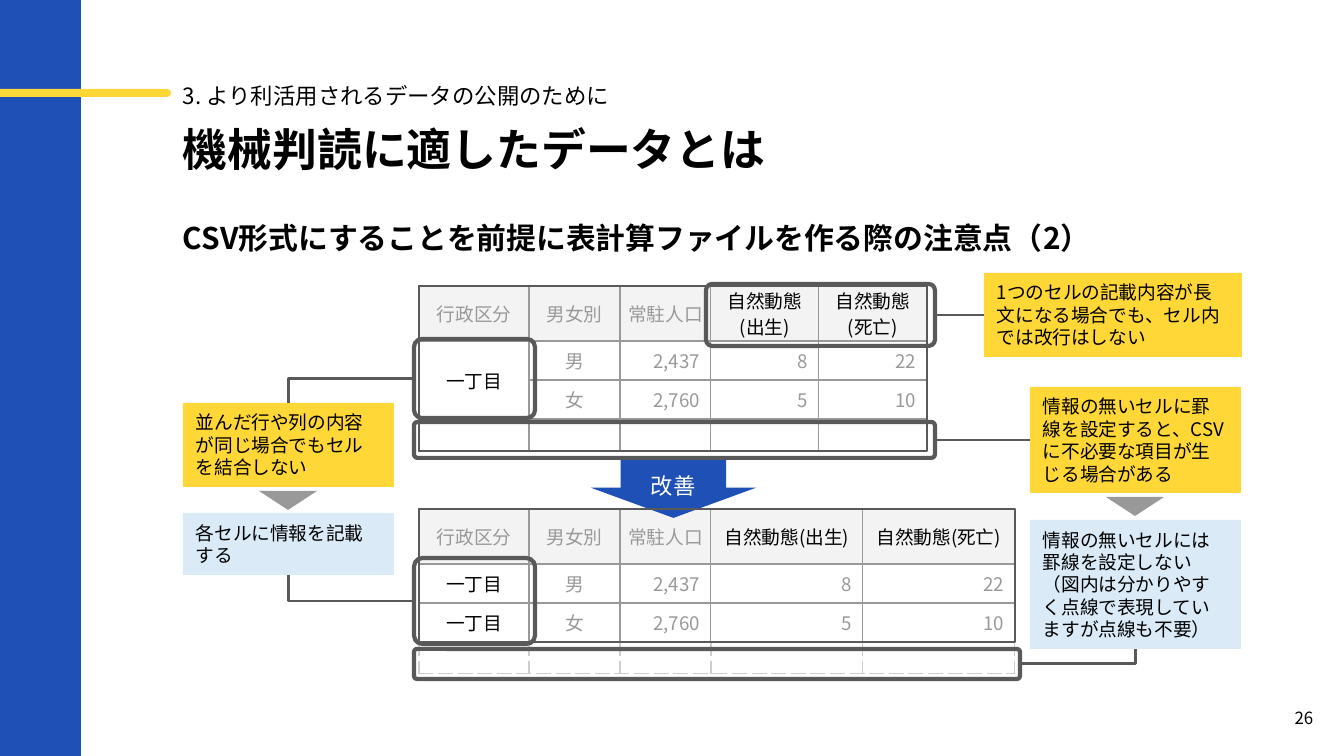
from lxml.etree import SubElement
from pptx import Presentation
from pptx.dml.color import RGBColor
from pptx.enum.shapes import MSO_CONNECTOR as LINK, MSO_SHAPE as SHAPE
from pptx.enum.text import MSO_ANCHOR as ANCHOR, PP_ALIGN as ALIGN
from pptx.oxml.ns import qn
from pptx.util import Emu, Pt

FONT = "Noto Sans CJK JP"
BLACK = RGBColor(0x00, 0x00, 0x00)
WHITE = RGBColor(0xFF, 0xFF, 0xFF)
BLUE = RGBColor(0x1E, 0x50, 0xB5)
YELLOW = RGBColor(0xFF, 0xD7, 0x37)
PALE_BLUE = RGBColor(0xDA, 0xEA, 0xF6)
GRAY = RGBColor(0x99, 0x99, 0x99)
DARK_GRAY = RGBColor(0x59, 0x59, 0x59)
LIGHT_GRAY = RGBColor(0xCD, 0xCD, 0xCD)
HEADER_GRAY = RGBColor(0xF3, 0xF3, 0xF3)
ROW_HEIGHTS = (55, 39, 39, 32)
TOP, LEFT, BOTTOM, RIGHT = range(4)


def px(length):
    """Turn a length in px into EMU."""
    return Emu(round(length * 914400 / 134.4))


def style(paragraph, size, color=BLACK, bold=False, align=ALIGN.LEFT):
    """Format a paragraph and all its runs."""
    paragraph.alignment = align
    for run in paragraph.runs:
        run.font.size = Pt(size)
        run.font.bold = bold
        run.font.color.rgb = color
        run.font.name = FONT
        SubElement(run._r.get_or_add_rPr(), qn("a:ea"), typeface=FONT)
    for line_break in paragraph._p.findall(qn("a:br")):
        SubElement(line_break, qn("a:rPr"), sz=str(size * 100))


def set_margins(holder, left=0, top=0, right=0, bottom=0):
    """Set the inner margins of a text frame or a cell."""
    holder.margin_left, holder.margin_top = px(left), px(top)
    holder.margin_right, holder.margin_bottom = px(right), px(bottom)


def add_text(slide, box, text, size, bold=False, anchor=ANCHOR.TOP, align=ALIGN.LEFT, spacing=None):
    """Add a text box without margins."""
    frame = slide.shapes.add_textbox(*map(px, box)).text_frame
    frame.word_wrap = True
    frame.vertical_anchor = anchor
    set_margins(frame)
    frame.text = text
    style(frame.paragraphs[0], size, bold=bold, align=align)
    if spacing:
        frame.paragraphs[0].line_spacing = spacing


def add_solid(slide, kind, box, color):
    """Add a filled shape without an outline."""
    solid = slide.shapes.add_shape(kind, *map(px, box))
    solid.shadow.inherit = False
    solid.fill.solid()
    solid.fill.fore_color.rgb = color
    solid.line.fill.background()
    return solid


def add_outline(slide, box, width=2.25, kind=SHAPE.ROUNDED_RECTANGLE):
    """Add an unfilled frame around a box."""
    outline = slide.shapes.add_shape(kind, *map(px, box))
    outline.shadow.inherit = False
    outline.fill.background()
    outline.line.color.rgb = DARK_GRAY
    outline.line.width = Pt(width)
    if kind == SHAPE.ROUNDED_RECTANGLE:
        outline.adjustments[0] = 0.1
    return outline


def add_frame_link(slide, frame, frame_side, callout, callout_side):
    """Join a frame to its callout, with one corner where the sides are at right angles."""
    straight = callout_side == LEFT
    link = slide.shapes.add_connector(LINK.STRAIGHT if straight else LINK.ELBOW, 0, 0, 0, 0)
    link.begin_connect(frame, frame_side)
    link.end_connect(callout, callout_side)
    link.line.color.rgb = DARK_GRAY
    link.line.width = Pt(1.5)
    properties = link._element.spPr
    if not straight:
        properties.find(qn("a:prstGeom")).set("prst", "bentConnector2")
    SubElement(properties, qn("a:effectLst"))


def add_border(cell, side, color, dash="solid"):
    """Draw one border of a cell."""
    border = SubElement(cell._tc.get_or_add_tcPr(), qn(f"a:ln{side}"), w=str(Pt(0.75)))
    fill = SubElement(border, qn("a:solidFill"))
    SubElement(fill, qn("a:srgbClr"), val=str(color))
    SubElement(border, qn("a:prstDash"), val=dash)


def population_table(slide, left, top, widths, rows, merged=False, dashed_end=False):
    """Draw a population table with an empty last row."""
    box = (left, top, sum(widths), sum(ROW_HEIGHTS))
    table = slide.shapes.add_table(len(ROW_HEIGHTS), len(widths), *map(px, box)).table
    table.first_row = table.horz_banding = False
    for column, width in zip(table.columns, widths):
        column.width = px(width)
    for row, height in zip(table.rows, ROW_HEIGHTS):
        row.height = px(height)
    for r, values in enumerate(rows):
        for c, value in enumerate(values):
            cell = table.cell(r, c)
            dashed = dashed_end and r == len(rows) - 1
            for side in "LRTB":
                if dashed and side != "T":
                    add_border(cell, side, LIGHT_GRAY, "dash")
                else:
                    add_border(cell, side, GRAY)
            cell.fill.solid()
            cell.fill.fore_color.rgb = WHITE if r else HEADER_GRAY
            cell.vertical_anchor = ANCHOR.MIDDLE
            numeric = r > 0 and c > 1
            set_margins(cell, right=11 if numeric else 0)
            paragraph = cell.text_frame.paragraphs[0]
            paragraph.text = value
            emphasized = c == 0 if r else c > 2
            style(paragraph, 10, BLACK if emphasized else GRAY,
                  align=ALIGN.RIGHT if numeric else ALIGN.CENTER)
            if not value:
                paragraph._p.get_or_add_endParaRPr().set("sz", "1000")
    if merged:
        table.cell(1, 0).merge(table.cell(2, 0))


def callout(slide, box, lines, color):
    """Draw a filled note."""
    note = add_solid(slide, SHAPE.RECTANGLE, box, color)
    frame = note.text_frame
    frame.word_wrap = True
    frame.vertical_anchor = ANCHOR.MIDDLE
    set_margins(frame, 13, 8, 13, 8)
    frame.text = "\n".join(lines)
    for paragraph in frame.paragraphs:
        style(paragraph, 10)
    return note


def callout_pair(slide, box, problem_height, fix_height, problem, fix):
    """Draw a problem note above its fix, with a pointer between them."""
    left, top, width, height = box
    problem_note = callout(slide, (left, top, width, problem_height), problem, YELLOW)
    fix_box = (left, top + height - fix_height, width, fix_height)
    fix_note = callout(slide, fix_box, fix, PALE_BLUE)
    pointer_box = (left + (width - 58) // 2, top + problem_height + 4, 58, 19)
    add_solid(slide, SHAPE.ISOSCELES_TRIANGLE, pointer_box, GRAY).rotation = 180
    return problem_note, fix_note


def improvement_arrow(slide, box):
    """Draw the labelled arrow from the first table to the second."""
    arrow = add_solid(slide, SHAPE.DOWN_ARROW, box, BLUE)
    arrow.adjustments[0], arrow.adjustments[1] = 0.64, 0.52
    frame = arrow.text_frame
    frame.vertical_anchor = ANCHOR.BOTTOM
    set_margins(frame, 13, 19, 13, 0)
    frame.text = "改善"
    style(frame.paragraphs[0], 12, WHITE, align=ALIGN.CENTER)


def page_frame(slide, width, height):
    """Draw the side band, the accent bar and the page number."""
    add_solid(slide, SHAPE.RECTANGLE, (0, 0, 81, height), BLUE)
    accent = add_solid(slide, SHAPE.ROUNDED_RECTANGLE, (-15, 89, 186, 8), YELLOW)
    accent.adjustments[0] = 0.5
    add_text(slide, (width - 69, height - 67, 58, 58), "26", 9,
             anchor=ANCHOR.MIDDLE, align=ALIGN.CENTER)


def headings(slide, left, top, width):
    """Write the chapter, the title and the lead line."""
    add_text(slide, (left, top, width, 36), "3. より利活用されるデータの公開のために", 12,
             anchor=ANCHOR.MIDDLE, spacing=1.25)
    add_text(slide, (left, top + 48, width, 54), "機械判読に適したデータとは", 24, bold=True)
    add_text(slide, (left, top + 137, width, 46),
             "CSV形式にすることを前提に表計算ファイルを作る際の注意点（2）", 16, bold=True, spacing=1.25)


def comparison(slide, left, top):
    """Draw both tables with their frames, notes and links."""
    shared = ["行政区分", "男女別", "常駐人口"]
    men, women = ["男", "2,437", "8", "22"], ["女", "2,760", "5", "10"]
    blank = [""] * 5
    population_table(slide, left, top, (110, 91, 91, 108, 108),
                     [shared + ["自然動態\v(出生)", "自然動態\v(死亡)"],
                      ["一丁目"] + men, [""] + women, blank], merged=True)
    add_outline(slide, (left, top, 508, 165), 0.75, SHAPE.RECTANGLE)
    population_table(slide, left, top + 223, (110, 91, 91, 152, 152),
                     [shared + ["自然動態(出生)", "自然動態(死亡)"],
                      ["一丁目"] + men, ["一丁目"] + women, blank], dashed_end=True)
    improvement_arrow(slide, (left + 172, top + 174, 165, 58))
    add_outline(slide, (left, top + 223, 596, 133), 0.75, SHAPE.RECTANGLE)

    merge_problem, merge_fix = callout_pair(
        slide, (left - 236, top + 117, 211, 172), 84, 62,
        ["並んだ行や列の内容が同じ場合でもセルを結合しない"], ["各セルに情報を記載する"])
    blank_problem, blank_fix = callout_pair(
        slide, (left + 611, top + 101, 211, 262), 106, 129,
        ["情報の無いセルに罫線を設定すると、CSVに不必要な項目が生じる場合がある"],
        ["情報の無いセルには罫線を設定しない",
         "（図内は分かりやすく点線で表現していますが点線も不要）"])
    wrap_problem = callout(slide, (left + 565, top - 13, 258, 84),
                           ["1つのセルの記載内容が長文になる場合でも、セル内では改行はしない"], YELLOW)

    for frame_box, frame_side, note, note_side in (
        ((-5, 53, 121, 79), LEFT, merge_problem, TOP),
        ((287, -2, 229, 62), RIGHT, wrap_problem, LEFT),
        ((-5, 136, 521, 36), RIGHT, blank_problem, LEFT),
        ((-5, 272, 121, 86), LEFT, merge_fix, BOTTOM),
        ((-5, 363, 606, 30), RIGHT, blank_fix, BOTTOM),
    ):
        x, y, width, height = frame_box
        frame = add_outline(slide, (left + x, top + y, width, height))
        add_frame_link(slide, frame, frame_side, note, note_side)


def main():
    """Build the slide and save it."""
    deck = Presentation()
    deck.slide_width, deck.slide_height = px(1344), px(756)
    slide = deck.slides.add_slide(deck.slide_layouts[6])
    page_frame(slide, 1344, 756)
    headings(slide, 183, 74, 1058)
    comparison(slide, 419, 286)
    deck.save("out.pptx")


if __name__ == "__main__":
    main()
